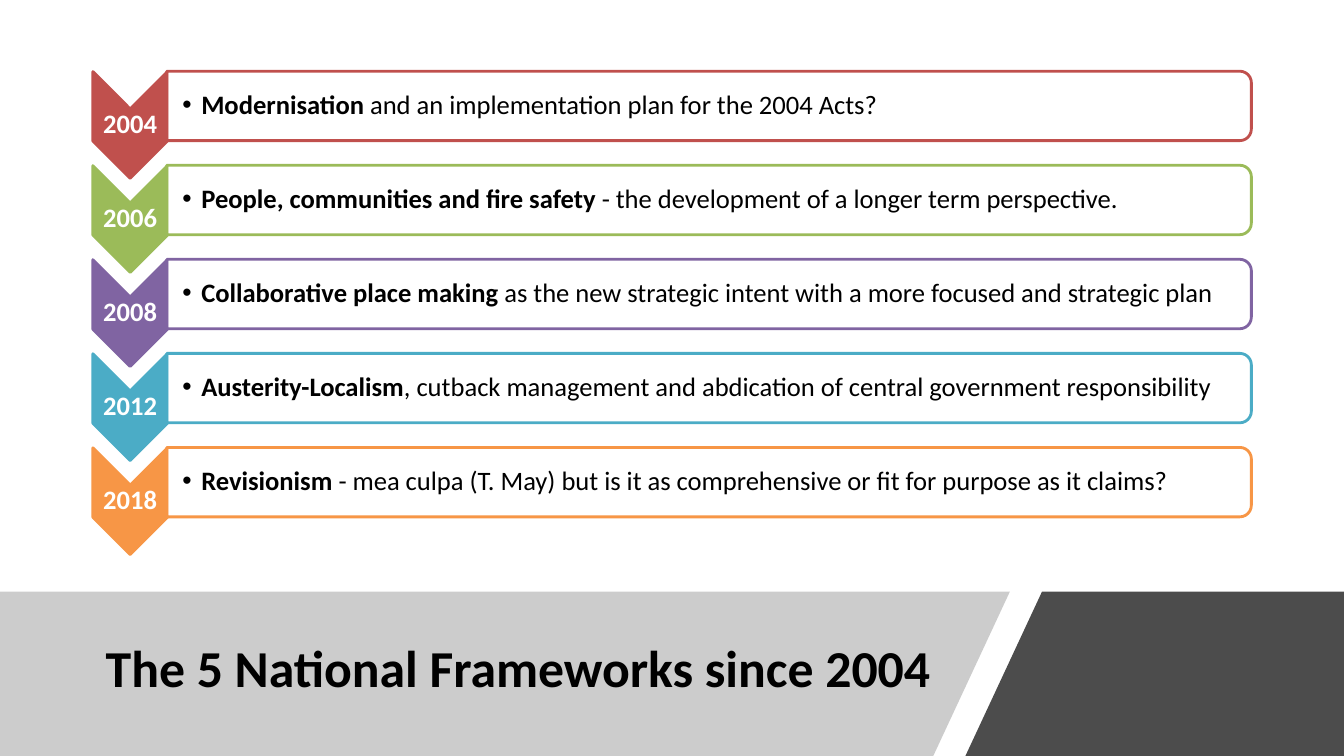
from dataclasses import dataclass

from lxml import etree
from pptx import Presentation
from pptx.dml.color import RGBColor
from pptx.enum.shapes import MSO_SHAPE
from pptx.enum.text import MSO_ANCHOR, PP_ALIGN
from pptx.oxml.ns import qn
from pptx.util import Cm, Pt

CHEVRON = MSO_SHAPE.CHEVRON
ROUND_TOP = MSO_SHAPE.ROUND_2_SAME_RECTANGLE
MIDDLE = MSO_ANCHOR.MIDDLE
LEFT, CENTER = PP_ALIGN.LEFT, PP_ALIGN.CENTER

WIDTH, HEIGHT = 33.87, 19.05
BAND_TOP = 14.91
PITCH = 2.37
YEAR_X, YEAR_Y = 3.28, 3.15
BAR_X, BAR_Y = 17.87, 2.67

FRAMES = [
    ("2004", "C0504D", "Modernisation", " and an implementation plan for the 2004 Acts?"),
    ("2006", "9BBB59", "People, communities and fire safety ",
     "- the development of a longer term perspective."),
    ("2008", "8064A2", "Collaborative place making ",
     "as the new strategic intent with a more focused and strategic plan"),
    ("2012", "4BACC6", "Austerity-Localism",
     ", cutback management and abdication of central government responsibility"),
    ("2018", "F79646", "Revisionism",
     " - mea culpa (T. May) but is it as comprehensive or fit for purpose as it claims?"),
]


@dataclass(frozen=True)
class Theme:
    """Colours, font and type sizes."""
    font: str = "Calibri"
    ink: str = "000000"
    paper: str = "FFFFFF"
    grey: str = "808080"
    title: int = 37
    body: int = 19
    line: int = 2


class Deck:
    """Draws styled elements on the current slide."""

    def __init__(self, theme, slide):
        self.theme = theme
        self.slide = slide

    def paint(self, shape, color, alpha=100, edge=None):
        """Fill a shape and set its outline."""
        shape.shadow.inherit = False
        shape.fill.solid()
        shape.fill.fore_color.rgb = RGBColor.from_string(color)
        if alpha < 100:
            tone = shape.fill._xPr.find(".//" + qn("a:srgbClr"))
            etree.SubElement(tone, qn("a:alpha"), val=str(alpha * 1000))
        if edge:
            shape.line.color.rgb = RGBColor.from_string(edge)
            shape.line.width = Pt(self.theme.line)
        else:
            shape.line.fill.background()

    def band(self, points, color, alpha):
        """Draw a filled polygon."""
        start, *rest = [(Cm(x), Cm(y)) for x, y in points]
        pen = self.slide.shapes.build_freeform(*start)
        pen.add_line_segments(rest, close=True)
        self.paint(pen.convert_to_shape(), color, alpha)

    def turned(self, kind, x, y, width, height, color, edge, alpha=100):
        """Draw a preset shape turned a quarter about its centre."""
        shape = self.slide.shapes.add_shape(
            kind, Cm(x - width / 2), Cm(y - height / 2), Cm(width), Cm(height))
        shape.rotation = 90
        self.paint(shape, color, alpha, edge)

    def label(self, parts, x, y, width, height, size, color, align=CENTER, pad=0.03):
        """Write runs of text and weight in a box about its centre."""
        box = self.slide.shapes.add_textbox(
            Cm(x - width / 2), Cm(y - height / 2), Cm(width), Cm(height))
        frame = box.text_frame
        frame.word_wrap = True
        frame.vertical_anchor = MIDDLE
        frame.margin_left = Cm(pad)
        frame.margin_right = frame.margin_top = frame.margin_bottom = Cm(0.03)
        para = frame.paragraphs[0]
        para.alignment = align
        para.line_spacing = 0.9
        for text, bold in parts:
            run = para.add_run()
            run.text = text
            run.font.name = self.theme.font
            run.font.size = Pt(size)
            run.font.bold = bold
            run.font.color.rgb = RGBColor.from_string(color)
        return para

    def bullet(self, para, indent):
        """Give a paragraph a hanging bullet."""
        props = para._p.get_or_add_pPr()
        props.set("marL", str(Cm(indent)))
        props.set("indent", str(-Cm(indent)))
        etree.SubElement(props, qn("a:buFont"), typeface="Arial")
        etree.SubElement(props, qn("a:buChar"), char="•")

    def row(self, shift, year, color, lead, rest):
        """Draw one framework with its year and summary."""
        theme = self.theme
        year_y, bar_y = YEAR_Y + shift, BAR_Y + shift
        self.turned(CHEVRON, YEAR_X, year_y, 2.69, 1.88, color, color)
        self.label([(year, True)], YEAR_X, year_y, 1.88, 0.81, theme.body, theme.paper)
        self.turned(ROUND_TOP, BAR_X, bar_y, 1.75, 27.33, theme.paper, color, 90)
        para = self.label([(lead, True), (rest, False)], 17.83, bar_y, 27.23, 1.57,
                          theme.body, theme.ink, LEFT, 0.38)
        self.bullet(para, 0.48)


def main():
    """Build and save the slide."""
    prs = Presentation()
    prs.slide_width, prs.slide_height = Cm(WIDTH), Cm(HEIGHT)
    theme = Theme()
    deck = Deck(theme, prs.slides.add_slide(prs.slide_layouts[6]))
    deck.band([(0, BAND_TOP), (25.45, BAND_TOP), (23.52, HEIGHT), (0, HEIGHT)],
              theme.grey, 40)
    deck.label([("The 5 National Frameworks since 2004", True)],
               13.06, 16.89, 21.44, 3.05, theme.title, theme.ink)
    deck.band([(26.26, BAND_TOP), (WIDTH, BAND_TOP), (WIDTH, HEIGHT), (24.33, HEIGHT)],
              theme.ink, 70)
    for index, frame in enumerate(FRAMES):
        deck.row(index * PITCH, *frame)
    prs.save("out.pptx")


if __name__ == "__main__":
    main()
